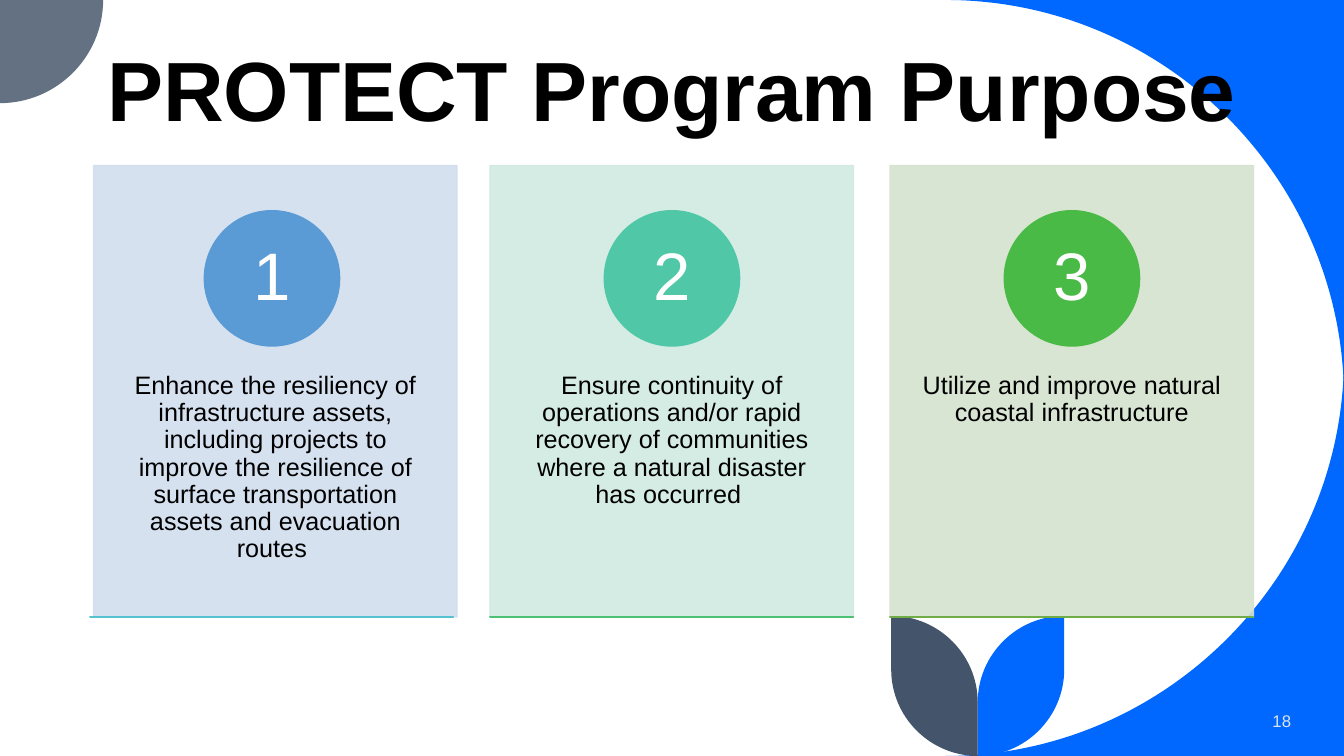
from lxml import etree
from pptx import Presentation
from pptx.dml.color import RGBColor
from pptx.enum import shapes, text
from pptx.oxml import ns
from pptx.util import Cm, Pt

PAGE_WIDTH, PAGE_HEIGHT = 33.87, 19.05
CARD_WIDTH, CARD_HEIGHT, CARD_TOP = 9.16, 11.38, 4.17
COLUMN_LEFT, COLUMN_STEP = 2.27, 10.08
CIRCLE_SIZE, CIRCLE_TOP, CIRCLE_INDENT = 3.41, 5.31, 2.88
LEAF_RADIUS, LEAF_TOP, LEAF_STEM, LEAF_EDGE = 2.18, 15.52, 24.64, 1.35
ARC_PULL = 0.55

CARDS = [
    ("Enhance the resiliency of infrastructure assets, including projects to "
     "improve the resilience of surface transportation assets and evacuation routes ",
     "D2DEEF", "5B9BD5", "55C3CF", 0.09),
    ("Ensure continuity of operations and/or rapid recovery of communities "
     "where a natural disaster has occurred ",
     "D0EAE1", "50C8A7", "4BC174", 0),
    ("Utilize and improve natural coastal infrastructure",
     "D5E3CF", "4ABA46", "70AD47", 0),
]


def colour(value):
    return RGBColor.from_string(value)


def lengths(*values):
    return [Cm(value) for value in values]


def apply(target, settings):
    for name, value in settings.items():
        setattr(target, name, value)


def set_alpha(shape, percent):
    for tint in shape._element.spPr.iter(ns.qn("a:srgbClr")):
        etree.SubElement(tint, ns.qn("a:alpha"), val=str(percent * 1000))


def paint(shape, fill, outlined=True):
    shape.shadow.inherit = False
    shape.fill.solid()
    shape.fill.fore_color.rgb = colour(fill)
    if outlined:
        shape.line.color.rgb = colour(fill)
        shape.line.width = Pt(1)
    else:
        shape.line.fill.background()


def add_block(page, kind, box, fill):
    shape = page.shapes.add_shape(shapes.MSO_SHAPE[kind], *lengths(*box))
    paint(shape, fill)
    return shape


def add_text(page, box, wording, size, ink, align="CENTER", anchor="TOP",
             margins=(0.25, 0.13), bold=False, spacing=0.9):
    frame = page.shapes.add_textbox(*lengths(*box)).text_frame
    side, end = lengths(*margins)
    apply(frame, {
        "auto_size": text.MSO_AUTO_SIZE.NONE,
        "word_wrap": True,
        "vertical_anchor": text.MSO_ANCHOR[anchor],
        "margin_left": side, "margin_right": side,
        "margin_top": end, "margin_bottom": end,
    })
    para = frame.paragraphs[0]
    apply(para, {"alignment": text.PP_ALIGN[align], "line_spacing": spacing})
    span = para.add_run()
    span.text = wording
    apply(span.font, {"name": "Arial", "size": Pt(size), "bold": bold})
    span.font.color.rgb = colour(ink)


def bend(segment, start, corner, end, origin):
    segment.tag = ns.qn("a:cubicBezTo")
    for index, point in enumerate((start, end)):
        pulled = [Cm(p + ARC_PULL * (c - p)) - o
                  for p, c, o in zip(point, corner, origin)]
        handle = etree.Element(ns.qn("a:pt"), x=str(pulled[0]), y=str(pulled[1]))
        segment.insert(index, handle)


def add_outline(page, start, steps, fill):
    builder = page.shapes.build_freeform(*lengths(*start))
    builder.add_line_segments([lengths(*end) for end, corner in steps], close=True)
    shape = builder.convert_to_shape()
    segments = list(shape._element.spPr.iter(ns.qn("a:lnTo")))
    for segment, (end, corner) in zip(segments, steps):
        if corner:
            bend(segment, start, corner, end, (shape.left, shape.top))
        start = end
    paint(shape, fill, outlined=False)


def add_leaf(page, side, fill):
    edge = LEAF_STEM + side * LEAF_RADIUS
    tip = (edge, LEAF_TOP)
    add_outline(page, tip, [
        ((edge, LEAF_TOP + LEAF_EDGE), None),
        ((LEAF_STEM, PAGE_HEIGHT), (edge, PAGE_HEIGHT)),
        ((LEAF_STEM, PAGE_HEIGHT - LEAF_EDGE), None),
        (tip, (LEAF_STEM, LEAF_TOP)),
    ], fill)


def add_corner(page, corner_y, inner_y):
    corner = (PAGE_WIDTH, corner_y)
    add_outline(page, corner, [
        ((23.83, corner_y), None),
        ((PAGE_WIDTH, inner_y), corner),
    ], "0068FF")


def add_backdrop(page):
    radius, small = 10.04, 2.6
    add_corner(page, 0, radius)
    add_corner(page, PAGE_HEIGHT, PAGE_HEIGHT - radius)
    add_outline(page, (0, 0), [
        ((small, 0), None),
        ((0, small), (small, small)),
    ], "637183")
    add_leaf(page, 1, "0068FF")
    add_leaf(page, -1, "44546A")


def add_card(page, index, wording, panel_fill, circle_fill, rule_fill, shift):
    column = COLUMN_LEFT + index * COLUMN_STEP
    left = column + shift
    panel = add_block(page, "RECTANGLE", (left, CARD_TOP, CARD_WIDTH, CARD_HEIGHT),
                      panel_fill)
    set_alpha(panel, 90)
    add_text(page, (left, 8.48, CARD_WIDTH, 6.83), wording, 18, "000000",
             margins=(0.71, 0.91))
    circle_left = column + CIRCLE_INDENT
    add_block(page, "OVAL", (circle_left, CIRCLE_TOP, CIRCLE_SIZE, CIRCLE_SIZE),
              circle_fill)
    add_text(page, (circle_left + 0.5, CIRCLE_TOP + 0.5, 2.41, 2.41), str(index + 1),
             48, "FFFFFF", anchor="MIDDLE", margins=(0.25, 0.03))
    add_block(page, "RECTANGLE", (column, CARD_TOP + CARD_HEIGHT, CARD_WIDTH, 0),
              rule_fill)


def main():
    deck = Presentation()
    apply(deck, {"slide_width": Cm(PAGE_WIDTH), "slide_height": Cm(PAGE_HEIGHT)})
    page = deck.slides.add_slide(deck.slide_layouts[6])
    add_backdrop(page)
    add_text(page, (28.19, 17.65, 4.6, 1.02), "18", 12, "DAE5EF",
             align="RIGHT", anchor="MIDDLE", spacing=1.0)
    add_text(page, (0, 1.11, PAGE_WIDTH, 3.05), "PROTECT Program Purpose", 60,
             "000000", bold=True)
    for index, card in enumerate(CARDS):
        add_card(page, index, *card)
    deck.save("out.pptx")


if __name__ == "__main__":
    main()
